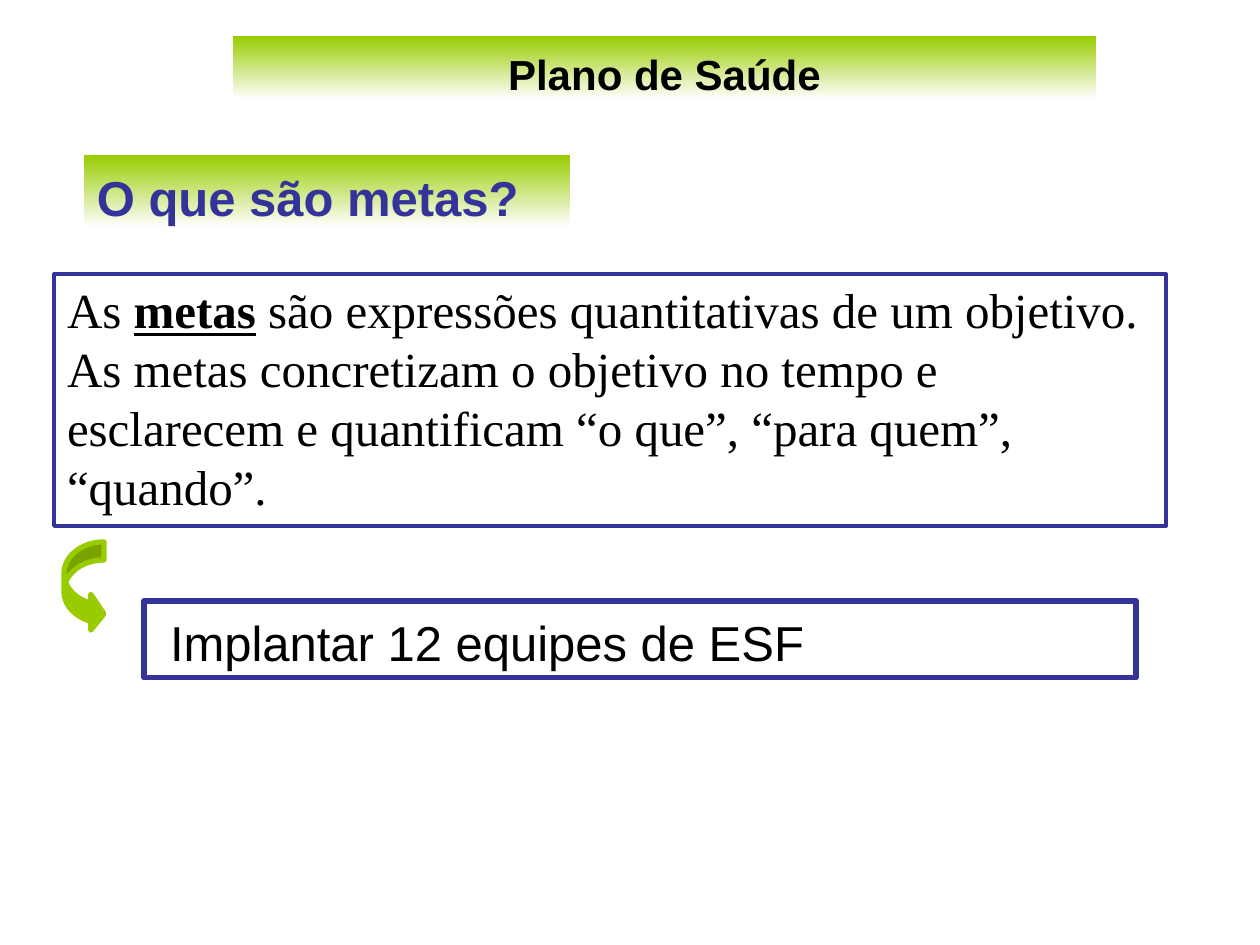
from pptx import Presentation
from pptx.dml.color import RGBColor
from pptx.enum.shapes import MSO_SHAPE as SHAPE
from pptx.enum.text import MSO_ANCHOR as ANCHOR, MSO_AUTO_SIZE as AUTOSIZE, PP_ALIGN as ALIGN
from pptx.util import Emu, Pt

TITLE = "Plano de Saúde"
QUESTION = "O que são metas?"
DEFINITION = [
    ("As ", False),
    ("metas", True),
    (" são expressões quantitativas de um objetivo. As metas concretizam o objetivo "
     "no tempo e esclarecem e quantificam “o que”, “para quem”, “quando”.", False),
]
EXAMPLE = "Implantar 12 equipes de ESF"

# left, top, width, height in px
BOXES = {
    "title": (233, 36, 863, 63),
    "question": (84, 155, 486, 72),
    "definition": (54, 274, 1112, 252),
    "example": (144, 601, 992, 77),
    "arrow": (64, 542, 40, 90),
}
THEME = {
    "green": RGBColor(0x99, 0xCC, 0x00),
    "blue": RGBColor(0x33, 0x33, 0x99),
    "black": RGBColor(0, 0, 0),
    "white": RGBColor(0xFF, 0xFF, 0xFF),
    "sans": "Arial",
    "serif": "Times New Roman",
    "title_size": 24,
    "text_size": 28,
}


def px(n):
    return Emu(round(n * 914400 / 126))


def place(sp, name):
    sp.left, sp.top, sp.width, sp.height = map(px, BOXES[name])


def add_shape(slide, kind, name):
    sp = slide.shapes.add_shape(kind, *map(px, BOXES[name]))
    sp.shadow.inherit = False
    return sp


def add_frame(slide, name, width):
    """Add an unfilled box with a blue outline."""
    sp = add_shape(slide, SHAPE.RECTANGLE, name)
    sp.fill.background()
    sp.line.color.rgb = THEME["blue"]
    sp.line.width = Pt(width)
    return sp


def fade(sp):
    """Fill from green at the top to white at the bottom, without an outline."""
    sp.fill.gradient()
    sp.fill.gradient_angle = 270
    for stop, color in zip(sp.fill.gradient_stops, ("green", "white")):
        stop.color.rgb = THEME[color]
    sp.line.fill.background()


def write(sp, runs, font="sans", size="text_size", color="black", bold=False,
          align=ALIGN.LEFT, left=13, top=12):
    """Write (text, emphasised) runs; emphasis is bold and underlined."""
    tf = sp.text_frame
    tf.word_wrap = True
    tf.auto_size = AUTOSIZE.NONE
    tf.vertical_anchor = ANCHOR.TOP
    tf.margin_left, tf.margin_right = px(left), px(13)
    tf.margin_top, tf.margin_bottom = px(top), px(6)
    p = tf.paragraphs[0]
    p.alignment = align
    p.line_spacing = 1.0
    p.space_before = Pt(0)
    for text, emphasised in runs:
        r = p.add_run()
        r.text = text
        r.font.name = THEME[font]
        r.font.size = Pt(THEME[size])
        r.font.color.rgb = THEME[color]
        r.font.bold = bold or emphasised
        r.font.underline = emphasised


def main():
    prs = Presentation()
    prs.slide_width, prs.slide_height = px(1260), px(945)
    slide = prs.slides.add_slide(prs.slide_layouts[5])

    title = slide.shapes.title
    place(title, "title")
    fade(title)
    write(title, [(TITLE, False)], size="title_size", bold=True, align=ALIGN.CENTER)

    write(add_frame(slide, "definition", 2.25), DEFINITION, font="serif", top=6)

    question = add_shape(slide, SHAPE.RECTANGLE, "question")
    fade(question)
    write(question, [(QUESTION, False)], color="blue", bold=True)

    write(add_frame(slide, "example", 3), [(EXAMPLE, False)], left=26)

    arrow = add_shape(slide, SHAPE.CURVED_RIGHT_ARROW, "arrow")
    for i, value in enumerate((0.45, 0.9, 0.33)):
        arrow.adjustments[i] = value
    arrow.fill.solid()
    arrow.fill.fore_color.rgb = THEME["green"]
    arrow.line.color.rgb = THEME["green"]
    arrow.line.width = Pt(3)

    prs.save("out.pptx")


if __name__ == "__main__":
    main()
